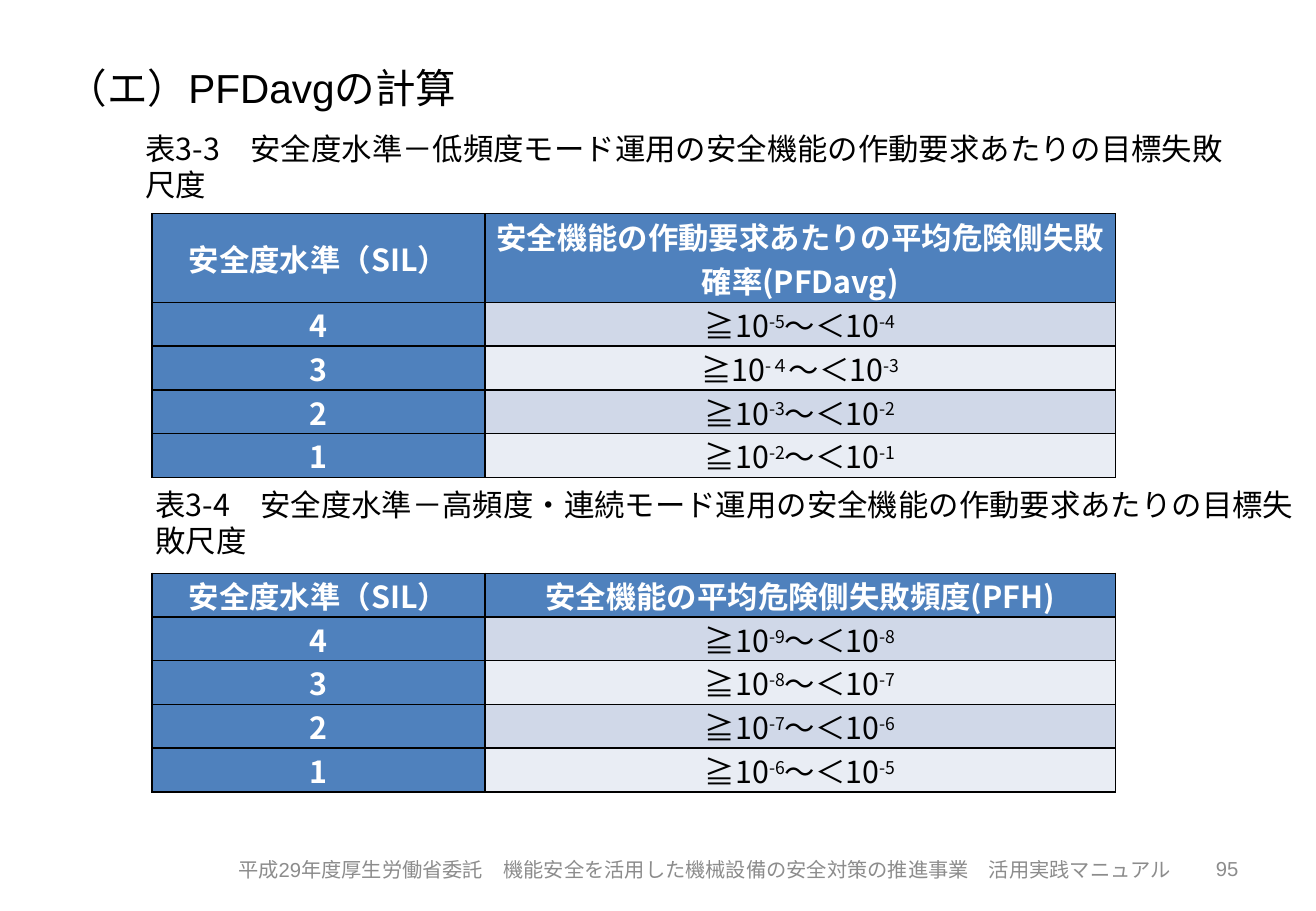
import pptx
import pptx.dml.color
import pptx.enum.text
import pptx.oxml
import pptx.oxml.ns
import pptx.util
from pptx.util import Inches

ALIGN = pptx.enum.text.PP_ALIGN
ANCHOR = pptx.enum.text.MSO_ANCHOR
LATIN = "Arial"
JAPANESE = "Noto Sans CJK JP"
COLORS = {
    "text": "000000",
    "header": "4F81BD",
    "header_text": "FFFFFF",
    "band_dark": "D0D8E8",
    "band_light": "E9EDF4",
    "border": "000000",
    "footer": "8C8C8C",
}
COLUMN_WIDTHS = [2.74, 5.19]
TABLE_LEFT = 1.25
ROW_HEIGHT = 0.36
TALL_HEADER_HEIGHT = 0.73
SIL_HEADER = "安全度水準（SIL）"
SIL_LEVELS = ["4", "3", "2", "1"]
PFD_RANGES = [("-5", "-4"), ("-４", "-3"), ("-3", "-2"), ("-2", "-1")]
PFH_RANGES = [("-9", "-8"), ("-8", "-7"), ("-7", "-6"), ("-6", "-5")]


def rgb(name):
    return pptx.dml.color.RGBColor.from_string(COLORS[name])


def add_run(paragraph, text, size, color="text", font=JAPANESE, bold=False, raised=False):
    run = paragraph.add_run()
    run.text = text
    formats = {"size": pptx.util.Pt(size), "name": font, "bold": bold}
    for attribute, value in formats.items():
        setattr(run.font, attribute, value)
    run.font.color.rgb = rgb(color)
    properties = run._r.get_or_add_rPr()
    east_asian = pptx.oxml.parse_xml(
        f'<a:ea {pptx.oxml.ns.nsdecls("a")} typeface="{JAPANESE}"/>'
    )
    properties.find(pptx.oxml.ns.qn("a:latin")).addnext(east_asian)
    if raised:
        properties.set("baseline", "30000")


def set_title(slide, text):
    title = slide.shapes.title
    place = {"left": 0.45, "top": 0.47, "width": 9.63, "height": 0.6}
    for attribute, value in place.items():
        setattr(title, attribute, Inches(value))
    title.text_frame.vertical_anchor = ANCHOR.TOP
    paragraph = title.text_frame.paragraphs[0]
    paragraph.alignment = ALIGN.LEFT
    add_run(paragraph, text, 24, font=LATIN)


def add_text(slide, box, text, size, align=ALIGN.LEFT, **style):
    frame = slide.shapes.add_textbox(*map(Inches, box)).text_frame
    frame.word_wrap = True
    frame.vertical_anchor = ANCHOR.MIDDLE
    paragraph = frame.paragraphs[0]
    paragraph.alignment = align
    add_run(paragraph, text, size, **style)


def add_borders(cell):
    properties = cell._tc.get_or_add_tcPr()
    for side in ("lnL", "lnR", "lnT", "lnB"):
        properties.append(pptx.oxml.parse_xml(
            f'<a:{side} {pptx.oxml.ns.nsdecls("a")} w="12700"><a:solidFill>'
            f'<a:srgbClr val="{COLORS["border"]}"/></a:solidFill></a:{side}>'
        ))


def prepare_cell(cell, fill):
    formats = {
        "margin_left": Inches(0.07),
        "margin_right": Inches(0.07),
        "margin_top": 0,
        "margin_bottom": 0,
        "vertical_anchor": ANCHOR.MIDDLE,
    }
    for attribute, value in formats.items():
        setattr(cell, attribute, value)
    add_borders(cell)
    cell.fill.solid()
    cell.fill.fore_color.rgb = rgb(fill)
    paragraph = cell.text_frame.paragraphs[0]
    paragraph.alignment = ALIGN.CENTER
    return paragraph


def fill_header(cell, text):
    add_run(prepare_cell(cell, "header"), text, 18, color="header_text", bold=True)


def fill_range(cell, lower, upper, band):
    paragraph = prepare_cell(cell, band)
    for base, exponent in (("≧10", lower), ("～＜10", upper)):
        add_run(paragraph, base, 18)
        add_run(paragraph, exponent, 18, raised=True)


def add_sil_table(slide, top, header_height, measure, ranges):
    row_heights = [header_height] + [ROW_HEIGHT] * len(ranges)
    table = slide.shapes.add_table(
        len(row_heights), len(COLUMN_WIDTHS), Inches(TABLE_LEFT), Inches(top),
        Inches(sum(COLUMN_WIDTHS)), Inches(sum(row_heights)),
    ).table
    for column, width in zip(table.columns, COLUMN_WIDTHS):
        column.width = Inches(width)
    for row, height in zip(table.rows, row_heights):
        row.height = Inches(height)
    fill_header(table.cell(0, 0), SIL_HEADER)
    fill_header(table.cell(0, 1), measure)
    for index, (level, limits) in enumerate(zip(SIL_LEVELS, ranges), 1):
        fill_header(table.cell(index, 0), level)
        band = "band_dark" if index % 2 else "band_light"
        fill_range(table.cell(index, 1), *limits, band)


def main():
    presentation = pptx.Presentation()
    presentation.slide_width = Inches(10.83)
    presentation.slide_height = Inches(7.5)
    slide = presentation.slides.add_slide(presentation.slide_layouts[5])

    set_title(slide, "（エ）PFDavgの計算")
    add_text(slide, (1.1, 1.17, 9.23, 0.4),
             "表3-3　安全度水準－低頻度モード運用の安全機能の作動要求あたりの目標失敗尺度", 18)
    add_sil_table(slide, 1.76, TALL_HEADER_HEIGHT,
                  "安全機能の作動要求あたりの平均危険側失敗確率(PFDavg)", PFD_RANGES)
    add_text(slide, (1.18, 4.1, 9.77, 0.4),
             "表3-4　安全度水準－高頻度・連続モード運用の安全機能の作動要求あたりの目標失敗尺度", 18)
    add_sil_table(slide, 4.72, ROW_HEIGHT, "安全機能の平均危険側失敗頻度(PFH)", PFH_RANGES)
    add_text(slide, (1.8, 6.99, 8, 0.33),
             "平成29年度厚生労働省委託　機能安全を活用した機械設備の安全対策の推進事業　活用実践マニュアル",
             12, ALIGN.CENTER, color="footer", font=LATIN)
    add_text(slide, (7.76, 6.95, 2.53, 0.4), "95", 12, ALIGN.RIGHT,
             color="footer", font=LATIN)
    presentation.save("out.pptx")


if __name__ == "__main__":
    main()
